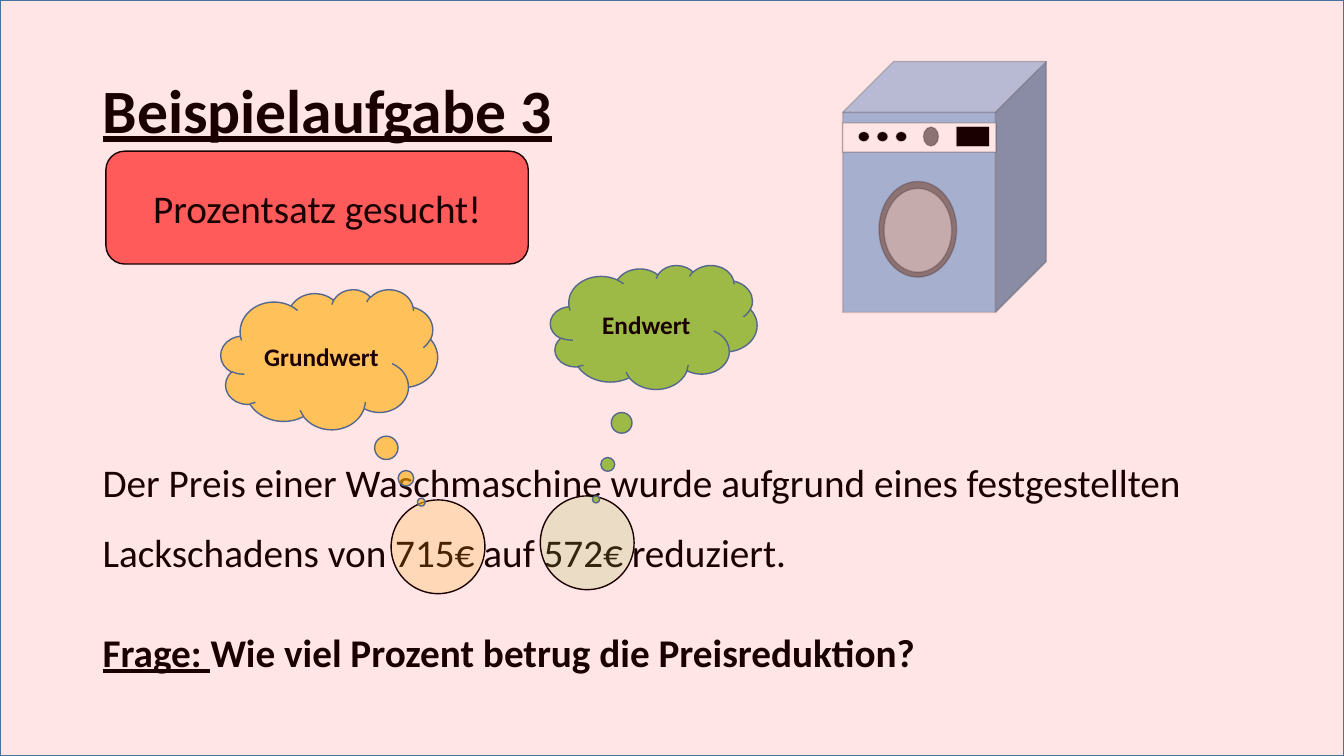
from lxml import etree
from pptx import Presentation
from pptx import util as u
from pptx.dml.color import RGBColor
from pptx.enum import shapes, text
from pptx.oxml.ns import qn

BLACK = RGBColor(0x00, 0x00, 0x00)
WHITE = RGBColor(0xFF, 0xFF, 0xFF)
STEEL = RGBColor(0x9D, 0xC3, 0xE6)
GREY = RGBColor(0x80, 0x80, 0x80)
SILVER = RGBColor(0xBF, 0xBF, 0xBF)
GREEN = RGBColor(0x92, 0xD0, 0x50)
AMBER = RGBColor(0xFF, 0xC0, 0x00)
RED = RGBColor(0xFF, 0x00, 0x00)
NAVY = RGBColor(0x43, 0x73, 0x9E)

KIND = shapes.MSO_SHAPE
LEFT, CENTER = text.PP_ALIGN.LEFT, text.PP_ALIGN.CENTER
TOP, MIDDLE = text.MSO_ANCHOR.TOP, text.MSO_ANCHOR.MIDDLE


def write(frame, content, size=28, bold=False, underline=False, align=LEFT,
          anchor=TOP, spacing=None, before=None, wrap=True):
    frame.word_wrap = wrap
    frame.vertical_anchor = anchor
    para = frame.paragraphs[0]
    para.alignment = align
    if spacing:
        para.line_spacing = spacing
    if before:
        para.space_before = u.Pt(before)
    return add_span(para, content, size, bold, underline)


def add_span(para, content, size=28, bold=False, underline=False):
    span = para.add_run()
    span.text = content
    span.font.name = "Calibri"
    span.font.size = u.Pt(size)
    span.font.bold = bold
    span.font.underline = underline
    span.font.color.rgb = BLACK
    return para


def set_opacity(fill_owner, percent):
    for color in fill_owner.iter(qn("a:srgbClr")):
        etree.SubElement(color, qn("a:alpha"), val=str(percent * 1000))


class Slide:
    def __init__(self, deck):
        self.deck = deck
        self.page = deck.slides.add_slide(deck.slide_layouts[6])

    def place(self, left, top, width, height):
        column = self.deck.slide_width / 100
        row = self.deck.slide_height / 100
        return [round(n) for n in (left * column, top * row, width * column, height * row)]

    def shape(self, kind, area, fill, line=BLACK, opacity=100, line_opacity=100,
              adjust=(), parent=None):
        box = (parent or self.page).shapes.add_shape(kind, *self.place(*area))
        box.shadow.inherit = False
        for index, value in enumerate(adjust):
            box.adjustments[index] = value
        box.fill.solid()
        box.fill.fore_color.rgb = fill
        if opacity < 100:
            set_opacity(box.element.spPr.find(qn("a:solidFill")), opacity)
        box.line.color.rgb = line
        box.line.width = u.Pt(1)
        if line_opacity < 100:
            set_opacity(box.element.spPr.find(qn("a:ln")), line_opacity)
        return box

    def label(self, area, content, **style):
        box = self.page.shapes.add_textbox(*self.place(*area))
        return write(box.text_frame, content, **style)

    def cloud(self, area, content, tail, fill, opacity=100):
        box = self.shape(KIND.CLOUD_CALLOUT, area, fill, NAVY, opacity, adjust=tail)
        write(box.text_frame, content, size=18, bold=True, align=CENTER, anchor=MIDDLE)

    def marker(self, left, top, fill):
        self.shape(KIND.OVAL, (left, top, 6.98, 12.4), fill, opacity=20)

    def washing_machine(self):
        machine = self.page.shapes.add_group_shape()
        knobs = [(KIND.OVAL, (63.9 + 1.39 * n, 17.47, 0.75, 1.2), BLACK) for n in range(3)]
        parts = [
            (KIND.CUBE, (62.7, 8.13, 15.15, 33.2), STEEL),
            (KIND.RECTANGLE, (62.7, 16.27, 11.4, 3.87), WHITE),
            (KIND.OVAL, (65.4, 24, 5.78, 12.67), GREY),
            (KIND.OVAL, (65.78, 24.93, 5.03, 11.07), SILVER),
            *knobs,
            (KIND.RECTANGLE, (71.18, 16.8, 2.4, 2.53), BLACK),
            (KIND.OVAL, (68.7, 16.8, 1.13, 2.53), GREY),
        ]
        for kind, area, fill in parts:
            self.shape(kind, area, fill, line_opacity=20, parent=machine)


def main():
    deck = Presentation()
    deck.slide_width, deck.slide_height = u.Inches(13.33), u.Inches(7.5)
    slide = Slide(deck)
    slide.washing_machine()

    slide.label((6.9, 5.33, 86.25, 19.33), "Beispielaufgabe 3", size=44, bold=True,
                underline=True, anchor=MIDDLE, spacing=0.9)
    slide.label((6.9, 56.8, 86.25, 48.93),
                "Der Preis einer Waschmaschine wurde aufgrund eines festgestellten "
                "Lackschadens von 715€ auf 572€ reduziert.", spacing=1.5, before=10)
    question = slide.label((6.9, 82.4, 62.7, 7.6), "Frage: ", bold=True,
                           underline=True, wrap=False)
    add_span(question, "Wie viel Prozent betrug die Preisreduktion?", bold=True)

    slide.marker(40.2, 65.6, GREEN)
    slide.cloud((40.95, 35.07, 15.38, 16.4), "Endwert", (-0.279, 1.39), GREEN)
    slide.marker(29.1, 66.13, AMBER)
    slide.cloud((16.43, 38.27, 16.13, 18.53), "Grundwert", (0.425, 1.02), AMBER, 60)

    hint = slide.shape(KIND.ROUNDED_RECTANGLE, (7.88, 20, 31.43, 14.93), RED, opacity=60)
    write(hint.text_frame, "Prozentsatz gesucht!", align=CENTER, anchor=MIDDLE)
    slide.shape(KIND.RECTANGLE, (0, 0, 100, 100), RED, NAVY, opacity=10)
    deck.save("out.pptx")


if __name__ == "__main__":
    main()
